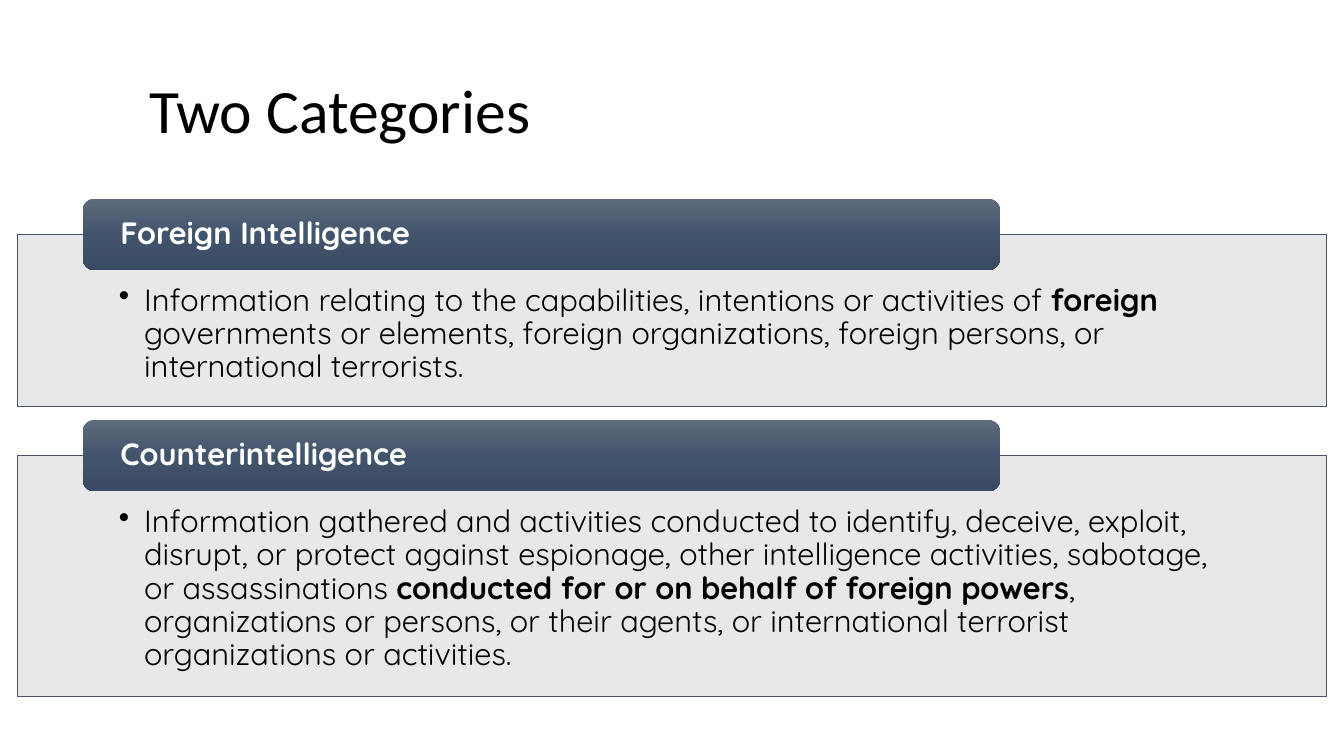
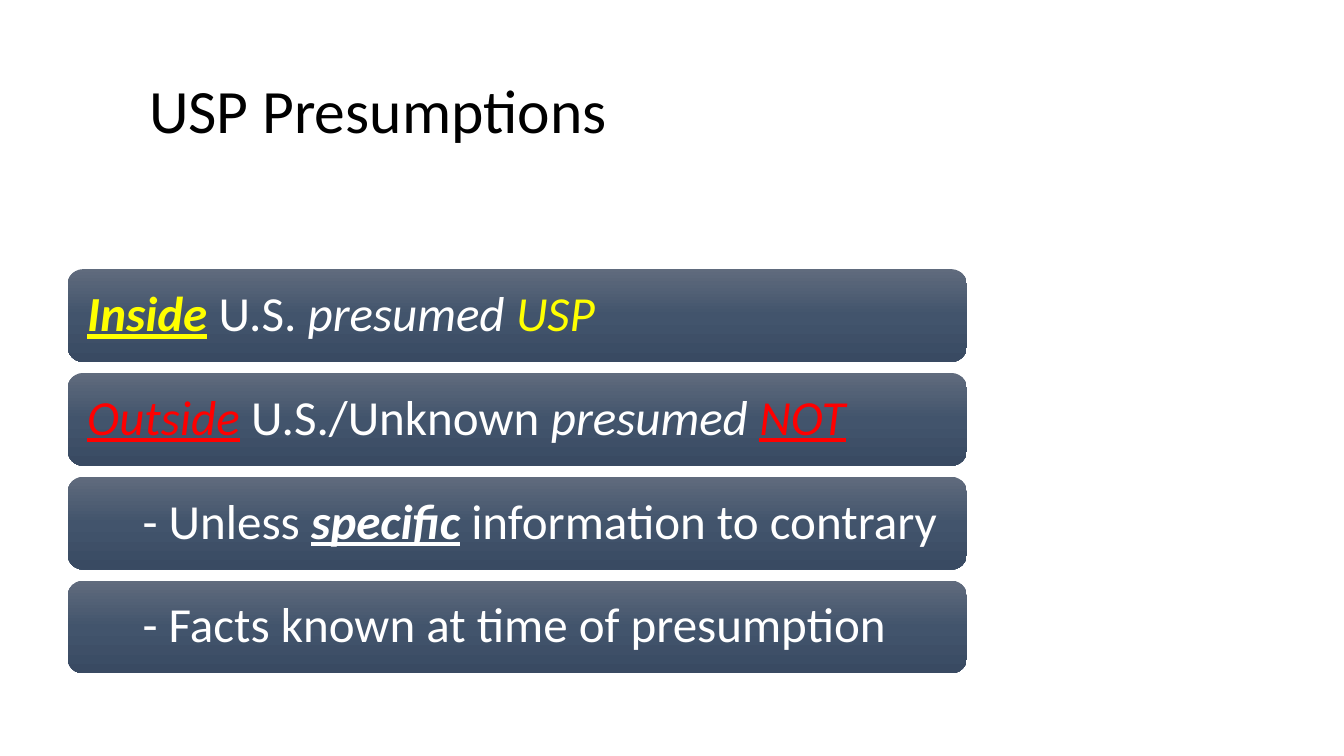
from copy import deepcopy

from lxml import etree
from pptx import Presentation
from pptx import util as u
from pptx.dml.color import RGBColor
from pptx.enum import shapes, text
from pptx.oxml import ns

WIDE, HIGH = 13.33, 7.5
BLACK, WHITE, YELLOW, RED = "000000", "FFFFFF", "FFFF00", "FF0000"
PALE, SLATE = "E7E6E6", "44546A"
BAND = ("606B7D", "42546C", "394A62")
SANS, ROUND = "Calibri", "Quicksand"
KIND = shapes.MSO_SHAPE
MID, TOP = text.MSO_ANCHOR.MIDDLE, text.MSO_ANCHOR.TOP

HEAD = 0.71         # height of a heading band
GAP = 0.13          # space between two blocks
BAR, PITCH = 0.92, 1.03

BLOCKS = [
    ("Foreign Intelligence", 1.71, [
        ("Information relating to the capabilities, intentions or "
         "activities of ",),
        ("foreign", "b"),
        (" governments or elements, foreign organizations, foreign persons, "
         "or international terrorists.",)]),
    ("Counterintelligence", 2.39, [
        ("Information gathered and activities conducted to identify, deceive, "
         "exploit, disrupt, or protect against espionage, other intelligence "
         "activities, sabotage, or assassinations ",),
        ("conducted for or on behalf of foreign powers", "b"),
        (", organizations or persons, or their agents, or international "
         "terrorist organizations or activities.",)]),
]

# Each bar: left inset, then runs of (words, style letters, colour)
BARS = [
    (0.15, [("Inside", "biu", YELLOW), (" U.S. ",),
            ("presumed ", "i"), ("USP", "i", YELLOW)]),
    (0.15, [("Outside", "iu", RED), (" U.S./Unknown ",),
            ("presumed ", "i"), ("NOT", "iu", RED)]),
    (0.7, [("- Unless ",), ("specific", "biu"),
           (" information to contrary",)]),
    (0.7, [("- Facts known at time of presumption",)]),
]


def rgb(code):
    return RGBColor.from_string(code)


def write(shape, runs, size, face, tone, pad, anchor=MID):
    """Fill a shape with one paragraph; pad is left, top, right, bottom."""
    frame = shape.text_frame
    frame.word_wrap = True
    frame.vertical_anchor = anchor
    (frame.margin_left, frame.margin_top,
     frame.margin_right, frame.margin_bottom) = map(u.Inches, pad)
    para = frame.paragraphs[0]
    para.alignment = text.PP_ALIGN.LEFT
    para.line_spacing = 0.9
    for words, *look in runs:
        style = look[0] if look else ""
        run = para.add_run()
        run.text = words
        font = run.font
        font.size, font.name = u.Pt(size), face
        font.bold, font.italic = "b" in style, "i" in style
        font.underline = "u" in style
        font.color.rgb = rgb(look[1] if len(look) > 1 else tone)
    return para


def bullet(para):
    props = para._p.get_or_add_pPr()
    props.set("marL", str(u.Inches(0.25)))
    props.set("indent", str(-u.Inches(0.25)))
    etree.SubElement(props, ns.qn("a:buChar")).set("char", "•")


def shape(slide, kind, *box):
    made = slide.shapes.add_shape(kind, *map(u.Inches, box))
    made.shadow.inherit = False
    return made


def band(slide, *box):
    """Rounded bar with the slate gradient, light at the top."""
    bar = shape(slide, KIND.ROUNDED_RECTANGLE, *box)
    bar.line.fill.background()
    bar.fill.gradient()
    bar.fill.gradient_angle = 270
    first = bar._element.spPr.find(".//" + ns.qn("a:gs"))
    first.addnext(deepcopy(first))
    for step, (stop, code) in enumerate(zip(bar.fill.gradient_stops, BAND)):
        stop.color.rgb = rgb(code)
        stop.position = step / 2
    return bar


def panel(slide, *box):
    pane = shape(slide, KIND.RECTANGLE, *box)
    pane.fill.solid()
    pane.fill.fore_color.rgb = rgb(PALE)
    tint = pane._element.spPr.find(ns.qn("a:solidFill"))[0]
    etree.SubElement(tint, ns.qn("a:alpha")).set("val", "90000")
    pane.line.color.rgb = rgb(SLATE)
    pane.line.width = u.Pt(0.5)
    return pane


def page(deck, title):
    slide = deck.slides.add_slide(deck.slide_layouts[6])
    box = slide.shapes.add_textbox(*map(u.Inches, (1.38, 0.4, 10.6, 1.45)))
    write(box, [(title,)], 44, SANS, BLACK, (0.1, 0.05, 0.1, 0.05))
    return slide


def block(slide, top, name, tall, runs):
    """Panel of detail with its heading band across the top edge."""
    pane = panel(slide, 0.17, top + HEAD / 2, 12.99, tall)
    bullet(write(pane, runs, 22, ROUND, BLACK, (1.01, 0.5, 1.01, 0.17), TOP))
    bar = band(slide, 0.82, top, 9.1, HEAD)
    write(bar, [(name, "b")], 22, ROUND, WHITE, (0.34, 0, 0.34, 0))


def main():
    deck = Presentation()
    deck.slide_width, deck.slide_height = u.Inches(WIDE), u.Inches(HIGH)

    slide = page(deck, "Two Categories")
    top = 1.97
    for name, tall, runs in BLOCKS:
        block(slide, top, name, tall, runs)
        top += HEAD / 2 + tall + GAP

    slide = page(deck, "USP Presumptions")
    for row, (left, runs) in enumerate(BARS):
        bar = band(slide, 0.67, 2.67 + row * PITCH, 8.92, BAR)
        write(bar, runs, 35, SANS, WHITE, (left, 0.15, 0.15, 0.15))

    deck.save("out.pptx")


if __name__ == "__main__":
    main()
